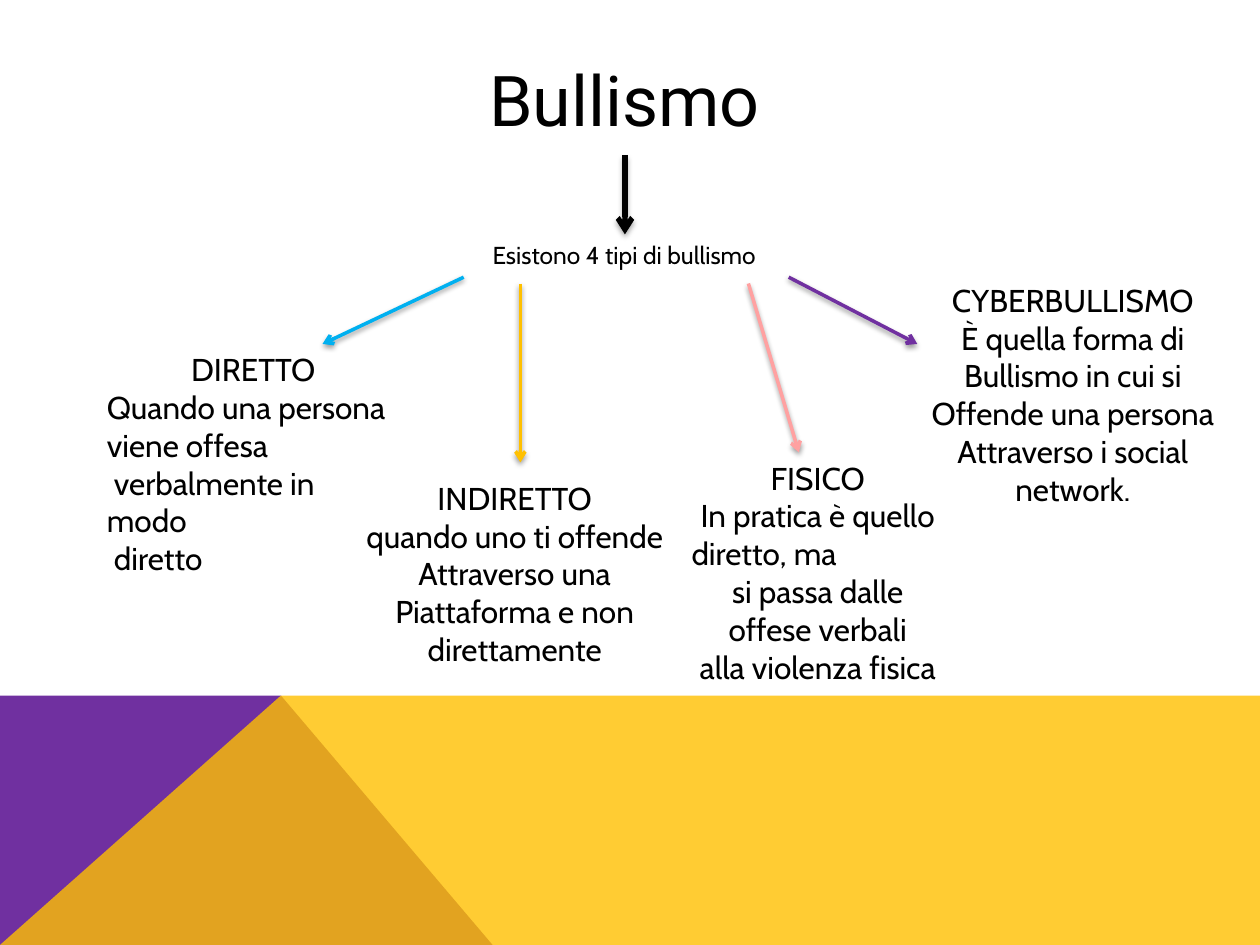
import pptx
import pptx.util
import pptx.dml.color
import pptx.enum.shapes
import pptx.enum.text
import pptx.oxml
import pptx.oxml.ns
from pptx.util import Inches

COLORS = {
    "black": "000000",
    "purple": "7030A0",
    "amber": "FFC000",
    "blue": "00B0F0",
    "pink": "FFA1A1",
}
CENTER = pptx.enum.text.PP_ALIGN.CENTER
LEFT = pptx.enum.text.PP_ALIGN.LEFT
NAMESPACE = pptx.oxml.ns.nsdecls("a")


class BullyingSlide:
    body_font = "Cabin"
    title_font = "Roboto"

    def __init__(self, presentation):
        self.slide = presentation.slides.add_slide(presentation.slide_layouts[5])

    def color(self, name):
        return pptx.dml.color.RGBColor.from_string(COLORS[name])

    def fill_text(self, shape, lines, size, font, left_lines=()):
        frame = shape.text_frame
        frame.text = "\n".join(lines)
        frame.word_wrap = True
        frame.auto_size = pptx.enum.text.MSO_AUTO_SIZE.NONE
        frame.vertical_anchor = pptx.enum.text.MSO_ANCHOR.TOP
        for index, paragraph in enumerate(frame.paragraphs):
            paragraph.alignment = LEFT if index in left_lines else CENTER
            for run in paragraph.runs:
                run.font.size = pptx.util.Pt(size)
                run.font.name = font
                run.font.color.rgb = self.color("black")

    def title(self, text, left, top, width, height):
        shape = self.slide.shapes.title
        shape.left, shape.top = Inches(left), Inches(top)
        shape.width, shape.height = Inches(width), Inches(height)
        self.fill_text(shape, [text], 40, self.title_font)

    def text(self, lines, left, top, width, height, size=18, left_lines=()):
        shape = self.slide.shapes.add_textbox(
            Inches(left), Inches(top), Inches(width), Inches(height))
        self.fill_text(shape, lines, size, self.body_font, left_lines)

    def band(self, points, color, opacity=100):
        corners = [(Inches(x), Inches(y)) for x, y in points]
        builder = self.slide.shapes.build_freeform(*corners[0], scale=1.0)
        builder.add_line_segments(corners[1:], close=True)
        shape = builder.convert_to_shape()
        shape.shadow.inherit = False
        shape.line.fill.background()
        shape.fill.solid()
        shape.fill.fore_color.rgb = self.color(color)
        if opacity < 100:
            fill_color = shape.element.spPr.find(".//" + pptx.oxml.ns.qn("a:srgbClr"))
            fill_color.append(pptx.oxml.parse_xml(
                f'<a:alpha {NAMESPACE} val="{opacity * 1000}"/>'))

    def arrow(self, start, end, color, width=2, shadow_opacity=38, shadow_distance=1.6):
        connector = self.slide.shapes.add_connector(
            pptx.enum.shapes.MSO_CONNECTOR.STRAIGHT,
            *(Inches(value) for value in start + end))
        connector.line.width = pptx.util.Pt(width)
        connector.line.color.rgb = self.color(color)
        connector.line._get_or_add_ln().append(
            pptx.oxml.parse_xml(f'<a:tailEnd {NAMESPACE} type="arrow"/>'))
        connector.element.spPr.append(pptx.oxml.parse_xml(
            f'<a:effectLst {NAMESPACE}><a:outerShdw blurRad="{pptx.util.Pt(3.1)}" '
            f'dist="{pptx.util.Pt(shadow_distance)}" dir="5400000" rotWithShape="0">'
            f'<a:srgbClr val="{COLORS["black"]}"><a:alpha val="{shadow_opacity * 1000}"/>'
            '</a:srgbClr></a:outerShdw></a:effectLst>'))


def main():
    presentation = pptx.Presentation()
    presentation.slide_width = Inches(10)
    presentation.slide_height = Inches(7.5)
    page = BullyingSlide(presentation)

    band_top, bottom, peak = 5.52, 7.5, 2.23
    page.band([(0, bottom), (0, band_top), (peak, band_top), (3.91, bottom)], "purple")
    page.band([(0, bottom), (peak, band_top), (10, band_top), (10, bottom)], "amber", 80)

    page.title("Bullismo", 2.87, 0.4, 4.17, 0.77)
    page.arrow((4.96, 1.23), (4.96, 1.86), "black", 3, 35, 1.8)
    page.text(["Esistono 4 tipi di bullismo"], 3.5, 1.86, 2.91, 0.34, size=14)

    for start, end, color in [
        ((6.26, 2.2), (7.28, 2.73), "purple"),
        ((3.68, 2.2), (2.56, 2.73), "blue"),
        ((4.13, 2.25), (4.13, 3.67), "amber"),
        ((5.94, 2.25), (6.34, 3.59), "pink"),
    ]:
        page.arrow(start, end, color)

    page.text(["DIRETTO", "Quando una persona", "viene offesa",
               " verbalmente in modo", " diretto"],
              0.75, 2.73, 2.52, 1.62, left_lines=(1, 2, 3, 4))
    page.text(["INDIRETTO", "quando uno ti offende", "Attraverso una",
               "Piattaforma e non", "direttamente"],
              2.8, 3.75, 2.57, 1.62)
    page.text(["FISICO", "In pratica è quello", "diretto, ma", "si passa dalle",
               "offese verbali", "alla violenza fisica"],
              5.39, 3.59, 2.2, 1.92, left_lines=(2,))
    page.text(["CYBERBULLISMO", "È quella forma di", "Bullismo in cui si",
               "Offende una persona", "Attraverso i social", "network."],
              7.28, 2.18, 2.47, 1.92)

    presentation.save("out.pptx")


if __name__ == "__main__":
    main()
